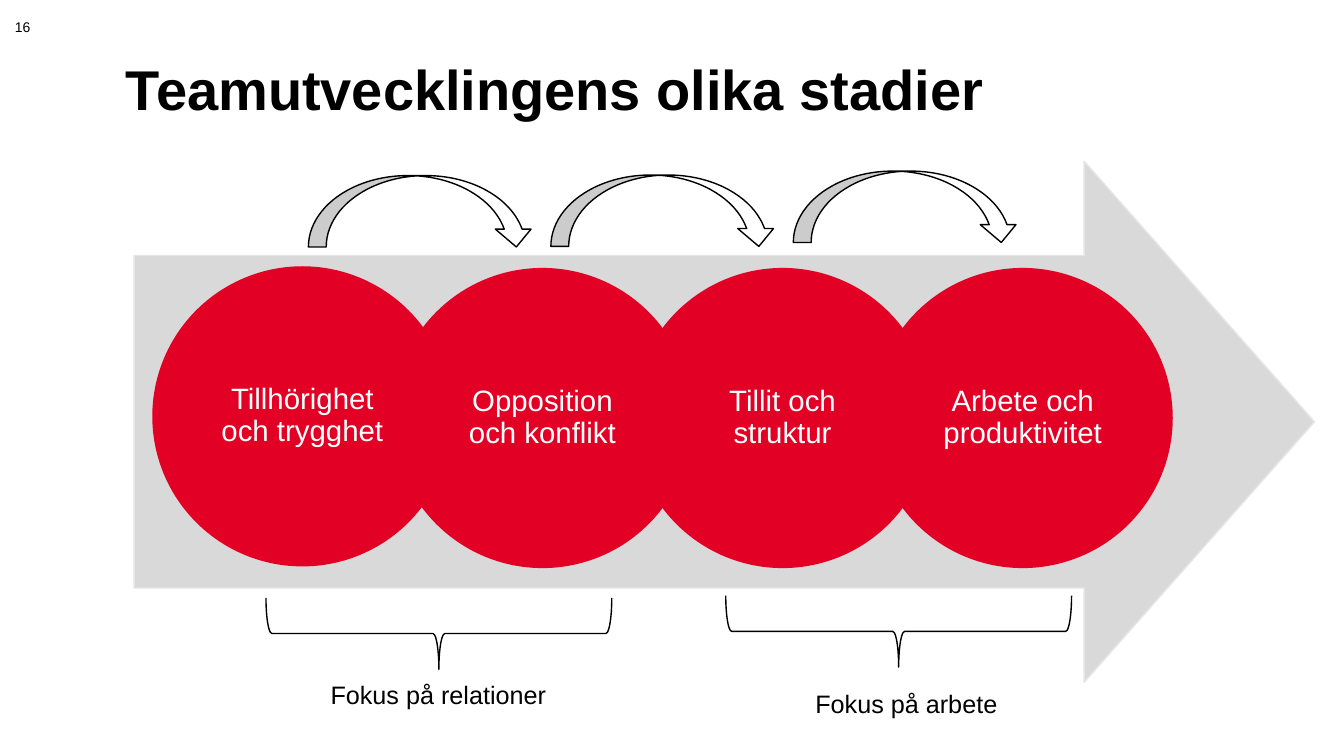
from pptx import Presentation
from pptx.dml.color import RGBColor
from pptx.enum import shapes, text
from pptx.util import Pt

BLACK = RGBColor(0, 0, 0)
WHITE = RGBColor(255, 255, 255)
RED = RGBColor(0xE2, 0x00, 0x25)
GREY = RGBColor(0xD9, 0xD9, 0xD9)
EDGE = RGBColor(0xE6, 0xE6, 0xE6)
KIND = shapes.MSO_SHAPE
MIDDLE = text.MSO_ANCHOR.MIDDLE

STAGES = ["Tillhörighet och trygghet", "Opposition och konflikt",
          "Tillit och struktur", "Arbete och produktivitet"]


def style(frame, size, color, bold=False):
    for para in frame.paragraphs:
        for run in para.runs:
            font = run.font
            font.name, font.size, font.bold = "Arial", Pt(size), bold
            font.color.rgb = color


def draw(slide, kind, box, fill=None, line=None):
    """Add a preset shape; no fill or line unless a colour is given."""
    shape = slide.shapes.add_shape(kind, *map(Pt, box))
    shape.shadow.inherit = False
    if fill is None:
        shape.fill.background()
    else:
        shape.fill.solid()
        shape.fill.fore_color.rgb = fill
    if line is None:
        shape.line.fill.background()
    else:
        shape.line.color.rgb = line
        shape.line.width = Pt(1)
    return shape


def label(slide, box, words, size):
    area = slide.shapes.add_textbox(*map(Pt, box))
    frame = area.text_frame
    frame.word_wrap = True
    frame.text = words
    style(frame, size, BLACK)
    return frame


def title(slide, box, words):
    head = slide.shapes.title
    head.left, head.top, head.width, head.height = map(Pt, box)
    frame = head.text_frame
    frame.text = words
    frame.vertical_anchor = text.MSO_ANCHOR.BOTTOM
    para = frame.paragraphs[0]
    para.alignment = text.PP_ALIGN.LEFT
    para.line_spacing = 0.9
    style(frame, 40, BLACK, True)


def circle(slide, box, words):
    disc = draw(slide, KIND.OVAL, box, RED)
    frame = disc.text_frame
    frame.word_wrap = True
    frame.margin_left = frame.margin_right = Pt(11.5)
    frame.margin_top = frame.margin_bottom = Pt(2.5)
    frame.vertical_anchor = MIDDLE
    frame.text = words
    para = frame.paragraphs[0]
    para.alignment = text.PP_ALIGN.CENTER
    para.line_spacing = 0.9
    style(frame, 21, WHITE)


def process(slide, box):
    """Draw the broad arrow, its stages and the arcs between them."""
    left, top, width, height = box
    arrow = draw(slide, KIND.RIGHT_ARROW, box, GREY, EDGE)
    arrow.adjustments[0] = 0.638
    arrow.adjustments[1] = 0.442
    size, step = 214.4, 171.5
    for i, words in enumerate(STAGES):
        drop = 75 if i == 0 else 76.2
        circle(slide, (left + 13 + i * step, top + drop, size, size), words)
    for i, rise in enumerate([10.2, 9.8, 7]):
        arc = (left + 124.5 + i * 173.2, top + rise, 161.3, 51)
        draw(slide, KIND.CURVED_DOWN_ARROW, arc, WHITE, BLACK)


def focus(slide, box, words, shift, drop):
    """Draw a brace that fills the box, with its label below."""
    left, top, width, height = box
    turned = (left + (width - height) / 2, top + (height - width) / 2,
              height, width)
    brace = draw(slide, KIND.RIGHT_BRACE, turned, line=BLACK)
    brace.rotation = 90
    label(slide, (left + shift, top + drop, 205.2, 29), words, 18)


def main():
    deck = Presentation()
    deck.slide_width, deck.slide_height = Pt(960), Pt(540)
    slide = deck.slides.add_slide(deck.slide_layouts[5])
    title(slide, (82.8, 22.3, 793.4, 69.1), "Teamutvecklingens olika stadier")
    process(slide, (95.8, 115.2, 843.1, 372.2))
    label(slide, (3.6, 5.8, 37.4, 26.6), "16", 10).vertical_anchor = MIDDLE
    focus(slide, (190, 427, 247, 51), "Fokus på relationer", 39, 54.7)
    focus(slide, (518.4, 425.5, 247, 51), "Fokus på arbete", 56.9, 62.7)
    deck.save("out.pptx")


if __name__ == "__main__":
    main()
